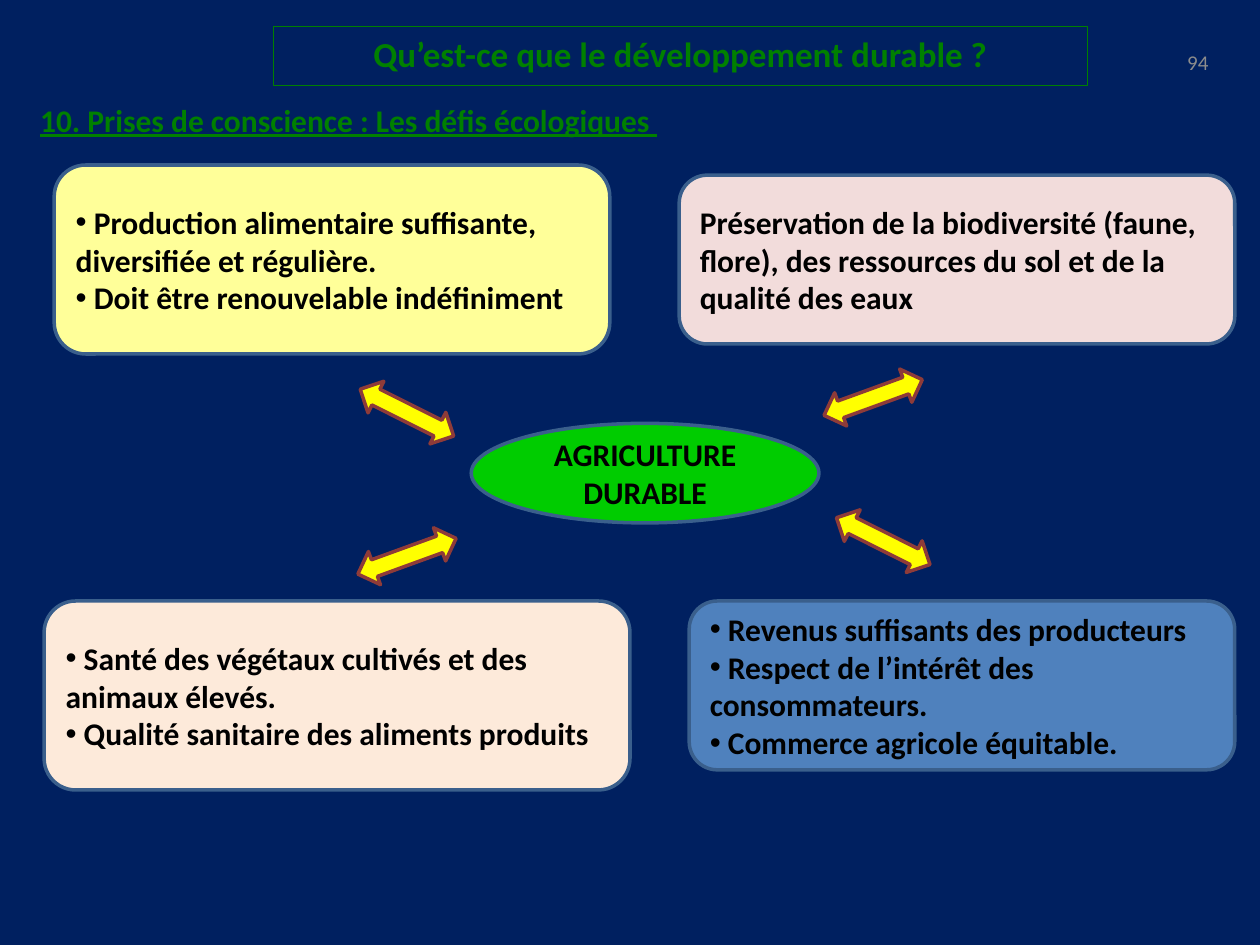
import lxml.etree
import pptx
import pptx.dml.color
import pptx.enum.shapes
import pptx.enum.text
import pptx.oxml.ns
import pptx.util

Inches = pptx.util.Inches
SHAPE = pptx.enum.shapes.MSO_SHAPE
ALIGN = pptx.enum.text.PP_ALIGN
ANCHOR = pptx.enum.text.MSO_ANCHOR

GREEN, BLACK, GREY = "008000", "000000", "8C8C8C"
BOX_LINE, ARROW_LINE = "3A5F8C", "8E3B39"

CARDS = [
    ((0.43, 1.31, 4.41, 1.5), "FFFF99", True, [
        "Production alimentaire suffisante, diversifiée et régulière.",
        "Doit être renouvelable indéfiniment"]),
    ((5.39, 1.39, 4.41, 1.34), "F2DCDB", False, [
        "Préservation de la biodiversité (faune, flore), des ressources "
        "du sol et de la qualité des eaux"]),
    ((0.35, 4.77, 4.65, 1.5), "FDEADA", True, [
        "Santé des végétaux cultivés et des animaux élevés.",
        "Qualité sanitaire des aliments produits"]),
    ((5.47, 4.77, 4.33, 1.34), "4F81BD", True, [
        "Revenus suffisants des producteurs",
        "Respect de l’intérêt des consommateurs.",
        "Commerce agricole équitable."]),
]
FALLING, RISING = 296.6, 70
ARROWS = [(3.09, 2.86, FALLING), (6.79, 2.74, RISING),
          (3.09, 4.0, RISING), (6.87, 3.88, FALLING)]


def colour(value):
    return pptx.dml.color.RGBColor.from_string(value)


def set_line(shape, value, width):
    shape.line.color.rgb = colour(value)
    shape.line.width = pptx.util.Pt(width)


def place(shape, box):
    for name, value in zip(("left", "top", "width", "height"), box):
        setattr(shape, name, Inches(value))


def add_bullet(para):
    """Bullet flush with the wrapped lines; the text brings its own space."""
    props = para._p.get_or_add_pPr()
    props.set("marL", "0")
    props.set("indent", "0")
    for tag, attribute, value in (("a:buFont", "typeface", "Arial"),
                                  ("a:buChar", "char", "•")):
        element = lxml.etree.SubElement(props, pptx.oxml.ns.qn(tag))
        element.set(attribute, value)


def write(shape, lines, align=ALIGN.LEFT, anchor=ANCHOR.MIDDLE, wrap=True,
          bullets=False, ink=BLACK, size=18, bold=True, underline=False):
    frame = shape.text_frame
    frame.word_wrap = wrap
    frame.vertical_anchor = anchor
    font_format = {"name": "Calibri", "size": pptx.util.Pt(size),
                   "bold": bold, "underline": underline}
    for index, line in enumerate(lines):
        para = frame.add_paragraph() if index else frame.paragraphs[0]
        para.alignment = align
        span = para.add_run()
        span.text = line
        if bullets:
            add_bullet(para)
            span.text = " " + line
        for name, value in font_format.items():
            setattr(span.font, name, value)
        span.font.color.rgb = colour(ink)


def add_filled(page, kind, box, fill, line):
    shape = page.shapes.add_shape(kind, *map(Inches, box))
    shape.shadow.inherit = False
    shape.fill.solid()
    shape.fill.fore_color.rgb = colour(fill)
    set_line(shape, line, 2)
    return shape


def add_heading(page, box):
    title = page.shapes.title
    place(title, box)
    set_line(title, GREEN, 0.75)
    title.text_frame.auto_size = pptx.enum.text.MSO_AUTO_SIZE.NONE
    write(title, ["Qu’est-ce que le développement durable ?"],
          align=ALIGN.CENTER, anchor=ANCHOR.TOP, ink=GREEN, size=20)


def add_label(page, box, text, **text_format):
    label = page.shapes.add_textbox(*map(Inches, box))
    write(label, [text], **text_format)


def add_card(page, box, fill, bullets, lines):
    card = add_filled(page, SHAPE.ROUNDED_RECTANGLE, box, fill, BOX_LINE)
    write(card, lines, bullets=bullets)


def add_hub(page, box):
    hub = add_filled(page, SHAPE.OVAL, box, "00CC00", BOX_LINE)
    write(hub, ["AGRICULTURE DURABLE"], align=ALIGN.CENTER)


def add_arrow(page, box, rotation):
    arrow = add_filled(page, SHAPE.UP_DOWN_ARROW, box, "FFFF00", ARROW_LINE)
    arrow.rotation = rotation


def main():
    deck = pptx.Presentation()
    deck.slide_width, deck.slide_height = Inches(10), Inches(7.5)
    page = deck.slides.add_slide(deck.slide_layouts.get_by_name("Title Only"))
    page.background.fill.solid()
    page.background.fill.fore_color.rgb = colour("002060")

    add_heading(page, (2.17, 0.21, 6.46, 0.47))
    add_label(page, (7.36, 0.29, 2.33, 0.4), "94", align=ALIGN.RIGHT,
              ink=GREY, size=12, bold=False)
    add_label(page, (0.22, 0.75, 5.14, 0.4),
              "10. Prises de conscience : Les défis écologiques ",
              anchor=ANCHOR.TOP, wrap=False, ink=GREEN, underline=True)
    add_hub(page, (3.74, 3.36, 2.76, 0.79))
    for card in CARDS:
        add_card(page, *card)
    for left, top, rotation in ARROWS:
        add_arrow(page, (left, top, 0.28, 0.83), rotation)
    deck.save("out.pptx")


if __name__ == "__main__":
    main()
